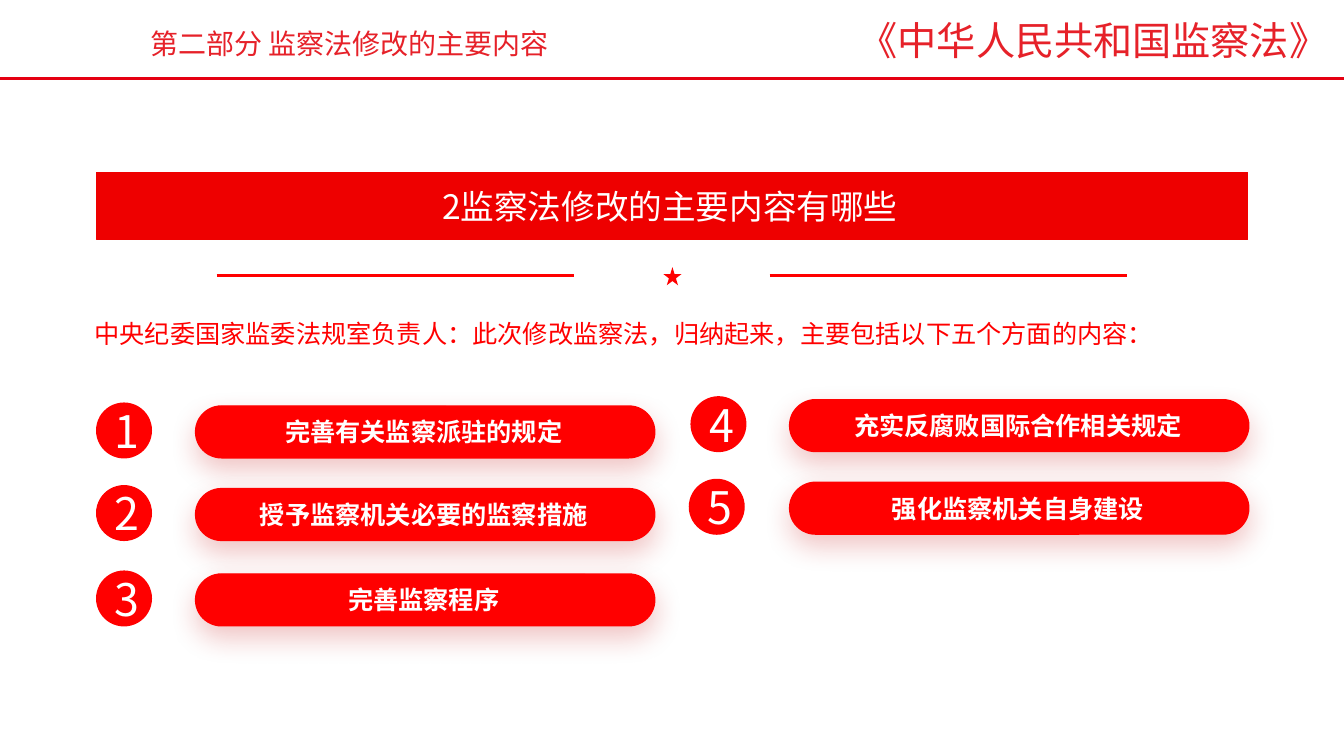
from lxml import etree
from pptx import Presentation
from pptx.dml.color import RGBColor
from pptx.enum.shapes import MSO_CONNECTOR, MSO_SHAPE
from pptx.enum.text import MSO_ANCHOR, MSO_AUTO_SIZE, PP_ALIGN
from pptx.oxml.ns import qn
from pptx.util import Pt

STRAIGHT = MSO_CONNECTOR.STRAIGHT
RECTANGLE, PILL = MSO_SHAPE.RECTANGLE, MSO_SHAPE.ROUNDED_RECTANGLE
OVAL, STAR = MSO_SHAPE.OVAL, MSO_SHAPE.STAR_5_POINT
LEFT, CENTER = PP_ALIGN.LEFT, PP_ALIGN.CENTER
TOP, MIDDLE = MSO_ANCHOR.TOP, MSO_ANCHOR.MIDDLE
GROW = MSO_AUTO_SIZE.SHAPE_TO_FIT_TEXT

FONT = "Noto Sans CJK SC"
COLORS = {"header": "E62129", "rule": "E50012", "banner": "EE0000",
          "red": "FF0000", "white": "FFFFFF", "shadow": "C30F0F"}

HEADERS = [
    ("第二部分 监察法修改的主要内容", 20, (100.1, 15.1, 303.1, 31.7)),
    ("《中华人民共和国监察法》", 28, (606.2, 7.9, 353.5, 41)),
]
HEADING = "2监察法修改的主要内容有哪些"
LEAD = "中央纪委国家监委法规室负责人：此次修改监察法，归纳起来，主要包括以下五个方面的内容："
RULES = [
    (0, 960, 56.2, "rule", 2.25),
    (154.8, 410.2, 196.6, "red", 2),
    (549.8, 805, 196.6, "red", 2),
]
POINTS = [
    ("完善有关监察派驻的规定", 69.1, 139.7, 288),
    ("授予监察机关必要的监察措施", 69.1, 139.7, 347),
    ("完善监察程序", 69.1, 139.7, 408),
    ("充实反腐败国际合作相关规定", 493.7, 564, 283.5),
    ("强化监察机关自身建设", 492.5, 564, 342.5),
]
CIRCLE = 39
BAR_WIDTH, BAR_HEIGHT = 328, 37
LABEL_WIDTH, LABEL_HEIGHT = 274.3, 30.2


def color(name):
    return RGBColor.from_string(COLORS[name])


def write(box, text, size, ink, align=LEFT, spacing=None, bold=False, anchor=TOP):
    box.text_frame.vertical_anchor = anchor
    para = box.text_frame.paragraphs[0]
    para.text = text
    para.alignment = align
    if spacing:
        para.line_spacing = spacing
    font = para.font
    font.size, font.bold = Pt(size), bold
    font.color.rgb = color(ink)
    font.name = FONT
    etree.SubElement(font._element if hasattr(font, "_element") else font._rPr,
                     qn("a:ea"), typeface=FONT)


def add_text(page, place, text, size, ink, wrap=True, **style):
    box = page.shapes.add_textbox(*map(Pt, place))
    box.text_frame.word_wrap = wrap
    box.text_frame.auto_size = GROW
    write(box, text, size, ink, **style)


def add_block(page, kind, place, fill, outlined=True):
    block = page.shapes.add_shape(kind, *map(Pt, place))
    block.shadow.inherit = False
    block.fill.solid()
    block.fill.fore_color.rgb = color(fill)
    if outlined:
        block.line.color.rgb = color(fill)
        block.line.width = Pt(1)
    else:
        block.line.fill.background()
    return block


def add_rule(page, start, end, height, ink, width):
    rule = page.shapes.add_connector(
        STRAIGHT, Pt(start), Pt(height), Pt(end), Pt(height))
    rule.line.color.rgb = color(ink)
    rule.line.width = Pt(width)
    etree.SubElement(rule._element.spPr, qn("a:effectLst"))


def add_soft_shadow(block):
    effects = block._element.spPr.find(qn("a:effectLst"))
    shadow = etree.SubElement(
        effects, qn("a:outerShdw"), blurRad=str(Pt(20)), dist=str(Pt(8)),
        dir="5400000", algn="t", rotWithShape="0")
    tint = etree.SubElement(shadow, qn("a:srgbClr"), val=COLORS["shadow"])
    etree.SubElement(tint, qn("a:alpha"), val="23000")


def add_heading(page):
    banner = add_block(page, RECTANGLE, (69.1, 123.1, 822.2, 48.2), "banner")
    title = page.shapes.title
    title.left, title.top, title.width, title.height = map(
        Pt, (92.9, 123.1, 771.1, 74.9))
    title.text_frame.word_wrap = True
    title.text_frame.auto_size = GROW
    write(title, HEADING, 24, "white", CENTER, 1.2)
    banner._element.addnext(title._element)


def add_point(page, number, text, circle_left, bar_left, top):
    bar_top = top + 2
    bar = add_block(page, PILL, (bar_left, bar_top, BAR_WIDTH, BAR_HEIGHT), "red")
    bar.adjustments[0] = 0.5
    add_soft_shadow(bar)
    label_left = bar_left + (BAR_WIDTH - LABEL_WIDTH) / 2 - 1
    add_text(page, (label_left, bar_top + 2, LABEL_WIDTH, LABEL_HEIGHT),
             text, 18, "white", align=CENTER, spacing=1.1, bold=True)
    circle = add_block(page, OVAL, (circle_left, top, CIRCLE, CIRCLE), "red")
    write(circle, str(number), 32, "white", CENTER, anchor=MIDDLE)


def main():
    deck = Presentation()
    deck.slide_width, deck.slide_height = Pt(960), Pt(540)
    page = deck.slides.add_slide(deck.slide_layouts[5])
    for text, size, place in HEADERS:
        add_text(page, place, text, size, "header", wrap=False)
    for rule in RULES:
        add_rule(page, *rule)
    add_text(page, (60.5, 213.1, 880.6, 36.7), LEAD, 18, "red", spacing=1.5)
    add_block(page, STAR, (473.8, 190.8, 13, 13), "red", outlined=False)
    add_heading(page)
    for number, point in enumerate(POINTS, 1):
        add_point(page, number, *point)
    deck.save("out.pptx")


if __name__ == "__main__":
    main()
